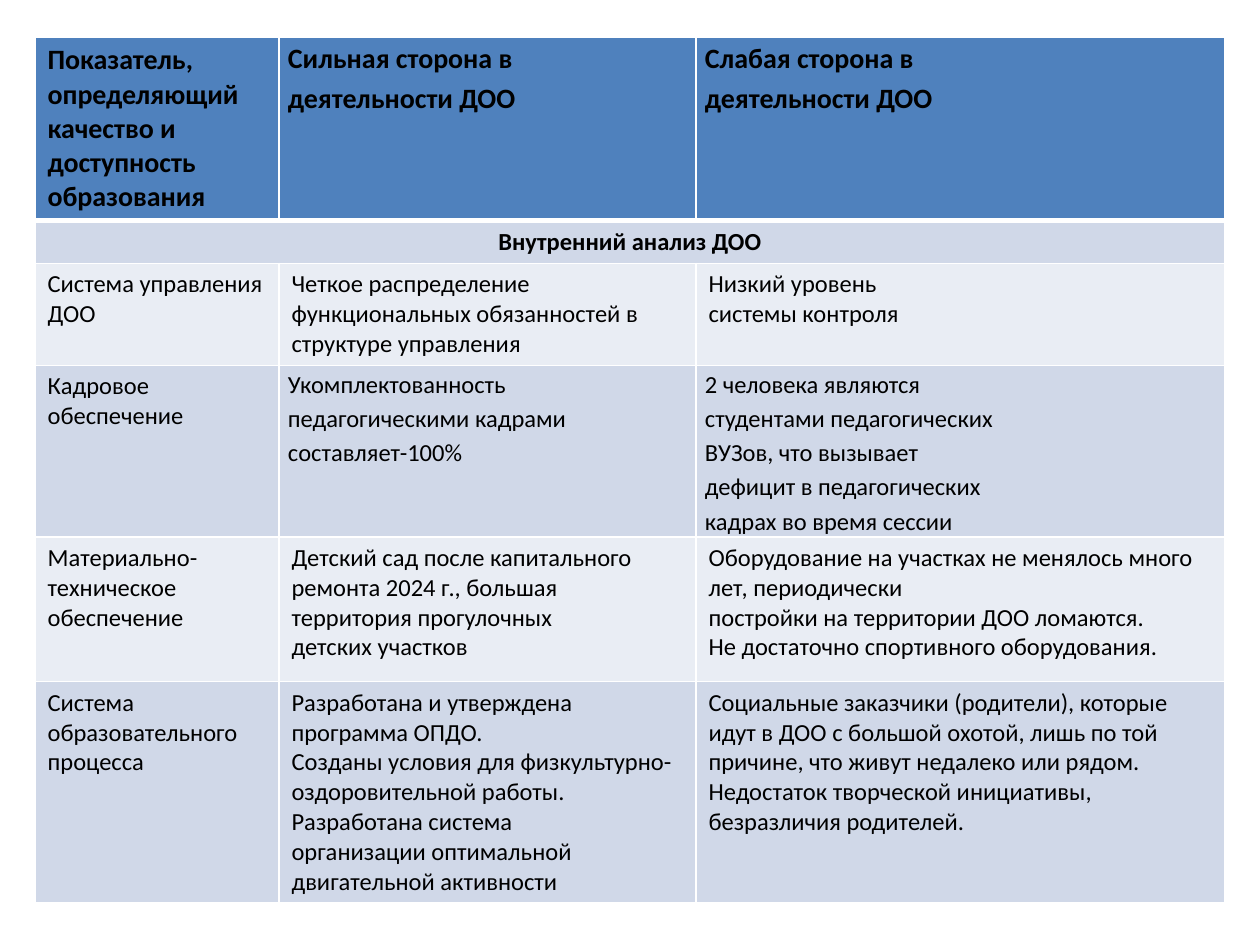
from lxml import etree
from pptx import Presentation
from pptx.dml.color import RGBColor
from pptx.enum.text import PP_ALIGN
from pptx.oxml.ns import qn
from pptx.util import Emu, Pt

CENTER = PP_ALIGN.CENTER
PX = 914400 // 126
FONT = "Calibri"
BLACK, WHITE = "000000", "FFFFFF"
HEADER_FILL = "4F81BD"
BAND_FILLS = ["E9EDF4", "D0D8E8"]
COLUMNS = [244, 417, 529]
ROWS = [108, 39, 91, 146, 145, 57]
SPACED_ROWS = (0, 3)
LEFT, TOP, HEIGHT = 35, 37, 855

CONTENT = [
    ["Показатель, определяющий\vкачество и доступность\vобразования",
     "Сильная сторона в\vдеятельности ДОО",
     "Слабая сторона в\vдеятельности ДОО"],
    ["Внутренний анализ ДОО", "", ""],
    ["Система управления ДОО",
     "Четкое распределение\vфункциональных обязанностей в\vструктуре управления",
     "Низкий уровень\vсистемы контроля"],
    ["Кадровое обеспечение",
     "Укомплектованность\vпедагогическими кадрами\vсоставляет-100%",
     "2 человека являются\vстудентами педагогических\vВУЗов, что вызывает\v"
     "дефицит в педагогических\vкадрах во время сессии"],
    ["Материально-техническое обеспечение",
     "Детский сад после капитального ремонта 2024 г., большая\v"
     "территория прогулочных\vдетских участков",
     "Оборудование на участках не менялось много лет, периодически\v"
     "постройки на территории ДОО ломаются.\n"
     "Не достаточно спортивного оборудования."],
    ["Система образовательного процесса",
     "Разработана и утверждена программа ОПДО.\n"
     "Созданы условия для физкультурно-оздоровительной работы.\n"
     "Разработана система\vорганизации оптимальной\vдвигательной активности",
     "Социальные заказчики (родители), которые идут в ДОО с большой охотой, "
     "лишь по той причине, что живут недалеко или рядом.\n"
     "Недостаток творческой инициативы, безразличия родителей."],
]


def px(length):
    return Emu(length * PX)


def color(value):
    return RGBColor.from_string(value)


def set_borders(cell, widths):
    properties = cell._tc.get_or_add_tcPr()
    for index, (side, width) in enumerate(widths.items()):
        line = etree.Element(qn(f"a:ln{side}"), w=str(Pt(width)))
        fill = etree.SubElement(line, qn("a:solidFill"))
        etree.SubElement(fill, qn("a:srgbClr"), val=WHITE)
        properties.insert(index, line)


def style_cell(cell, row, column):
    cell.fill.solid()
    cell.fill.fore_color.rgb = color(BAND_FILLS[row % 2] if row else HEADER_FILL)
    set_borders(cell, {"L": 1, "R": 1, "T": 3 if row == 1 else 1, "B": 1 if row else 3})
    spaced = row in SPACED_ROWS and column > 0
    if spaced:
        cell.margin_left = cell.margin_right = px(9)
        cell.margin_top = cell.margin_bottom = 0
    for para in cell.text_frame.paragraphs:
        para.font.name = FONT
        para.font.size = Pt(14 if row else 16)
        para.font.bold = row < 2
        para.font.color.rgb = color(BLACK)
        if spaced:
            para.line_spacing = 1.15
        if row == 1:
            para.alignment = CENTER


def main():
    deck = Presentation()
    deck.slide_width, deck.slide_height = px(1260), px(945)
    page = deck.slides.add_slide(deck.slide_layouts[6])
    frame = page.shapes.add_table(len(ROWS), len(COLUMNS), px(LEFT), px(TOP),
                                  px(sum(COLUMNS)), px(HEIGHT))
    table = frame.table
    table.horz_banding = False
    for column, width in zip(table.columns, COLUMNS):
        column.width = px(width)
    for row, height in zip(table.rows, ROWS):
        row.height = px(height)
    frame.height = px(HEIGHT)
    for row, texts in enumerate(CONTENT):
        for column, text in enumerate(texts):
            cell = table.cell(row, column)
            cell.text = text
            style_cell(cell, row, column)
    table.cell(1, 0).merge(table.cell(1, len(COLUMNS) - 1))
    deck.save("out.pptx")


if __name__ == "__main__":
    main()
